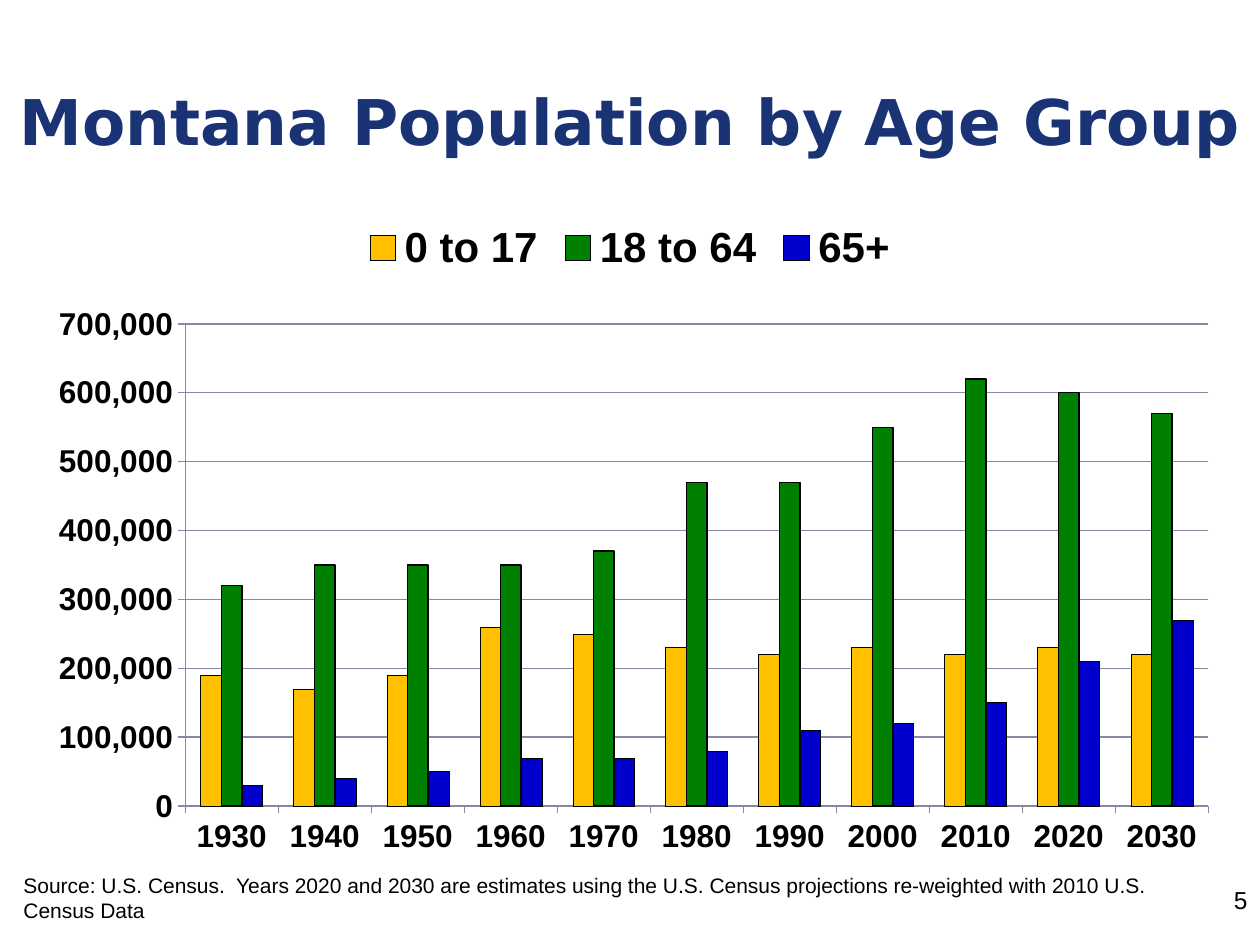
from lxml import etree
from pptx import Presentation
from pptx.chart import data
from pptx.dml import color
from pptx.enum import chart as charts, text
from pptx.oxml import ns
from pptx.util import Emu, Pt

YEARS = [str(year) for year in range(1930, 2031, 10)]
SERIES = [
    ("0 to 17", "FFC000", 0.25, [190, 170, 190, 260, 250, 230, 220, 230, 220, 230, 220]),
    ("18 to 64", "008000", 0.75, [320, 350, 350, 350, 370, 470, 470, 550, 620, 600, 570]),
    ("65+", "0000CC", 0.25, [30, 40, 50, 70, 70, 80, 110, 120, 150, 210, 270]),
]
PLOT_AREA = {"x": 0.147, "y": 0.172, "w": 0.812, "h": 0.709}
SOURCE = ("Source: U.S. Census.  Years 2020 and 2030 are estimates using the U.S. Census "
          "projections re-weighted with 2010 U.S. Census Data")


def px(length):
    return Emu(round(length * 914400 / 126))


def rgb(value):
    return color.RGBColor.from_string(value)


class SlideBuilder:
    """Holds the style and the current slide, and adds each kind of element."""

    ink, navy, grid = "000000", "193374", "8888A4"

    def __init__(self, presentation):
        self.slide = presentation.slides.add_slide(presentation.slide_layouts[5])

    def style_font(self, font, size, name="Arial", bold=False, ink=ink):
        for key, value in {"size": Pt(size), "name": name, "bold": bold}.items():
            setattr(font, key, value)
        font.color.rgb = rgb(ink)

    def style_line(self, line, ink, width):
        line.color.rgb = rgb(ink)
        line.width = Pt(width)

    def fill_text(self, shape, content, align, anchor, **font):
        frame = shape.text_frame
        settings = {"text": content, "word_wrap": True, "vertical_anchor": anchor,
                    "auto_size": text.MSO_AUTO_SIZE.NONE}
        for key, value in settings.items():
            setattr(frame, key, value)
        paragraph = frame.paragraphs[0]
        paragraph.alignment = align
        self.style_font(paragraph.runs[0].font, **font)

    def title(self, content, left, top, width, height):
        shape = self.slide.shapes.title
        box = {"left": left, "top": top, "width": width, "height": height}
        for key, value in box.items():
            setattr(shape, key, px(value))
        self.fill_text(shape, content, text.PP_ALIGN.CENTER, text.MSO_ANCHOR.MIDDLE,
                       size=36, name="DejaVu Sans", bold=True, ink=self.navy)

    def text_box(self, content, box, size, align=text.PP_ALIGN.LEFT):
        shape = self.slide.shapes.add_textbox(*map(px, box))
        self.fill_text(shape, content, align, text.MSO_ANCHOR.TOP, size=size)

    def column_chart(self, box):
        chart_data = data.CategoryChartData(number_format="#,##0")
        chart_data.categories = YEARS
        for name, _, _, thousands in SERIES:
            chart_data.add_series(name, [value * 1000 for value in thousands])
        chart = self.slide.shapes.add_chart(
            charts.XL_CHART_TYPE.COLUMN_CLUSTERED, *map(px, box), chart_data).chart
        self.style_font(chart.font, 10, "Times New Roman", ink="102E6C")
        chart.has_title = False
        plot = chart.plots[0]
        for key, value in {"gap_width": 150, "overlap": 0, "vary_by_categories": False}.items():
            setattr(plot, key, value)
        for series, (_, fill, width, _) in zip(plot.series, SERIES):
            series.format.fill.solid()
            series.format.fill.fore_color.rgb = rgb(fill)
            self.style_line(series.format.line, self.ink, width)
        self.chart_axes(chart)
        self.chart_legend(chart)
        self.place_plot(chart)

    def chart_axes(self, chart):
        for axis in (chart.category_axis, chart.value_axis):
            axis.major_tick_mark = charts.XL_TICK_MARK.OUTSIDE
            self.style_font(axis.tick_labels.font, 18, bold=True)
            self.style_line(axis.format.line, self.grid, 0.75)
        axis = chart.value_axis
        for key, value in {"minimum_scale": 0, "maximum_scale": 700000, "major_unit": 100000,
                           "has_major_gridlines": True}.items():
            setattr(axis, key, value)
        self.style_line(axis.major_gridlines.format.line, self.grid, 0.75)
        axis.tick_labels.number_format = "#,##0"
        axis.tick_labels.number_format_is_linked = False

    def chart_legend(self, chart):
        chart.has_legend = True
        chart.legend.position = charts.XL_LEGEND_POSITION.TOP
        chart.legend.include_in_layout = False
        self.style_font(chart.legend.font, 24, bold=True)

    def place_plot(self, chart):
        area = chart.element.find(".//" + ns.qn("c:plotArea"))
        for layout in area.findall(ns.qn("c:layout")):
            area.remove(layout)
        layout = etree.Element(ns.qn("c:layout"))
        area.insert(0, layout)
        manual = etree.SubElement(layout, ns.qn("c:manualLayout"))
        settings = {"layoutTarget": "inner", "xMode": "edge", "yMode": "edge", **PLOT_AREA}
        for key, value in settings.items():
            etree.SubElement(manual, ns.qn("c:" + key), val=str(value))


def main():
    presentation = Presentation()
    presentation.slide_width, presentation.slide_height = px(1260), px(945)
    builder = SlideBuilder(presentation)
    builder.column_chart((0, 207, 1260, 680))
    builder.text_box("5", (1192, 879, 68, 66), 14, text.PP_ALIGN.RIGHT)
    builder.title("Montana Population by Age Group", 0, 21, 1260, 199)
    builder.text_box(SOURCE, (11, 866, 1206, 63), 12)
    presentation.save("out.pptx")


if __name__ == "__main__":
    main()
